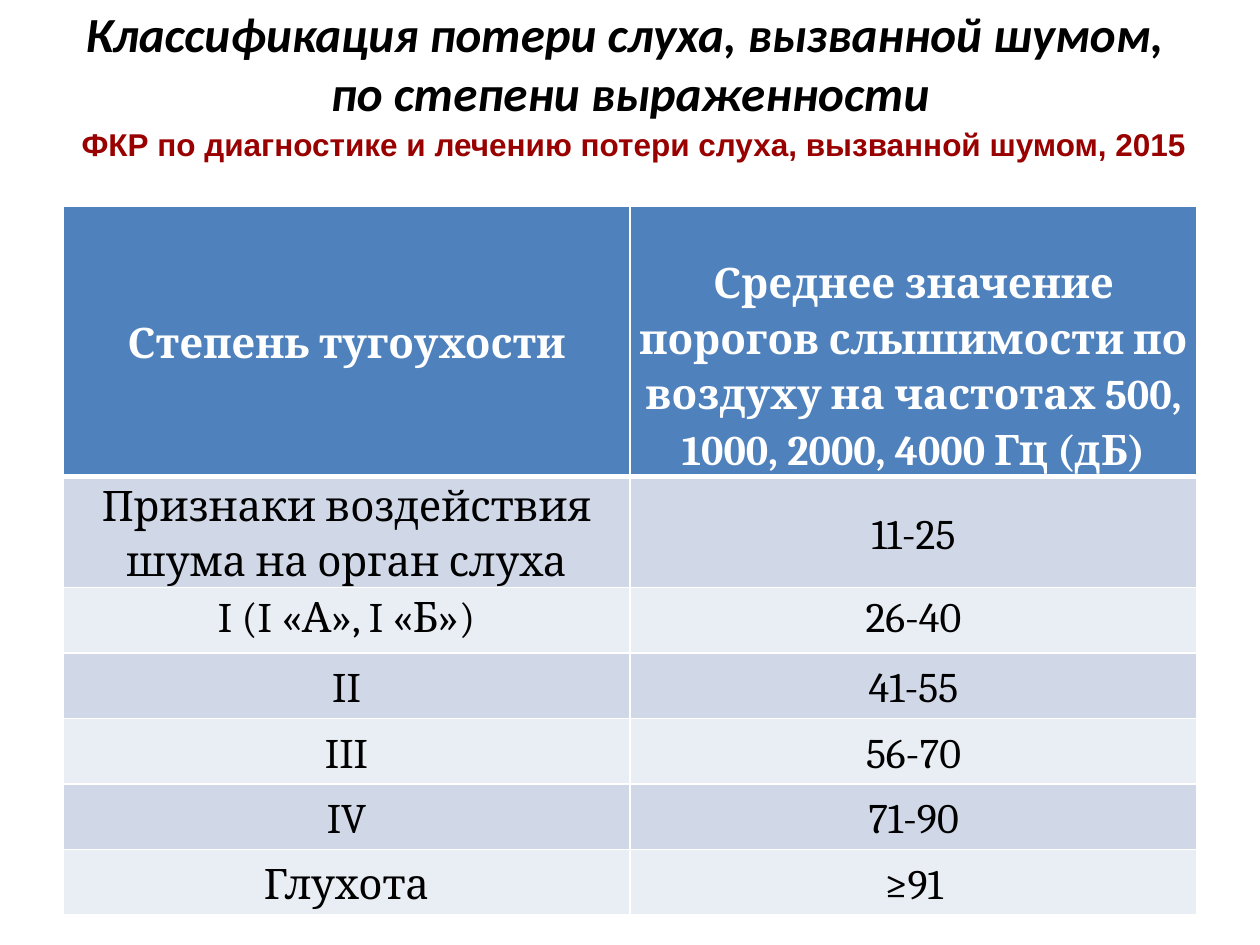
from lxml.etree import SubElement
from pptx import Presentation
from pptx.dml.color import RGBColor
from pptx.enum.text import MSO_ANCHOR, MSO_AUTO_SIZE, PP_ALIGN
from pptx.oxml.ns import qn
from pptx.util import Inches, Pt

# Content
TITLE = "Классификация потери слуха, вызванной шумом, \vпо степени выраженности"
SOURCE = "ФКР по диагностике и лечению потери слуха, вызванной шумом, 2015"
ROWS = [
    ("Степень тугоухости",
     "Среднее значение порогов слышимости по воздуху на частотах 500, 1000, 2000, 4000 Гц (дБ)"),
    ("Признаки воздействия шума на орган слуха", "11-25"),
    ("I (I «А», I «Б»)", "26-40"),
    ("II", "41-55"),
    ("III", "56-70"),
    ("IV", "71-90"),
    ("Глухота", "≥91"),
]
ROW_HEIGHTS = [2.14, 0.88] + [0.52] * 5
TOP_ALIGNED_ROW = 2
HEADER_DROP = 0.37  # space above the long column heading

THEME = {
    "title": {"font": "Calibri", "size": 28, "color": "000000", "bold": True, "italic": True},
    "source": {"font": "Arial", "size": 18, "color": "990000", "bold": True},
    "header": {"font": "Cambria", "size": 24, "color": "FFFFFF", "bold": True},
    "body": {"font": "Cambria", "size": 24, "color": "000000"},
    "header_fill": "4F81BD",
    "band_fills": ("E9EDF4", "D0D8E8"),
    "border": "FFFFFF",
}


def format_text(text_frame, style, alignment=None, line_spacing=None):
    for paragraph in text_frame.paragraphs:
        paragraph.alignment = alignment
        paragraph.line_spacing = line_spacing
        for run in paragraph.runs:
            font = run.font
            font.name = style["font"]
            font.size = Pt(style["size"])
            font.bold = style.get("bold", False)
            font.italic = style.get("italic", False)
            font.color.rgb = RGBColor.from_string(style["color"])


def set_borders(cell, widths):
    """Draw the cell's sides; widths are points for left, right, top, bottom."""
    properties = cell._tc.get_or_add_tcPr()
    for index, (side, width) in enumerate(zip("LRTB", widths)):
        line = SubElement(properties, qn(f"a:ln{side}"), w=str(Pt(width)))
        fill = SubElement(line, qn("a:solidFill"))
        SubElement(fill, qn("a:srgbClr"), val=THEME["border"])
        properties.insert(index, line)


def add_title(slide):
    title = slide.shapes.title
    title.left, title.top = Inches(0.5), Inches(0.1)
    title.width, title.height = Inches(9), Inches(0.79)
    text_frame = title.text_frame
    text_frame.text = TITLE
    text_frame.auto_size = MSO_AUTO_SIZE.NONE
    text_frame.vertical_anchor = MSO_ANCHOR.MIDDLE
    format_text(text_frame, THEME["title"], PP_ALIGN.CENTER)


def add_table(slide):
    table = slide.shapes.add_table(
        len(ROWS), len(ROWS[0]), Inches(0.5), Inches(1.64),
        Inches(9), Inches(sum(ROW_HEIGHTS))).table
    for row_index, (texts, height) in enumerate(zip(ROWS, ROW_HEIGHTS)):
        table.rows[row_index].height = Inches(height)
        is_header = row_index == 0
        fill = THEME["header_fill"] if is_header else THEME["band_fills"][row_index % 2]
        for column_index, text in enumerate(texts):
            cell = table.cell(row_index, column_index)
            cell.text_frame.text = text
            format_text(cell.text_frame, THEME["header" if is_header else "body"],
                        PP_ALIGN.CENTER, 1.15)
            cell.margin_left = cell.margin_right = Inches(0.07)
            cell.margin_top = cell.margin_bottom = 0
            cell.vertical_anchor = (
                MSO_ANCHOR.TOP if row_index == TOP_ALIGNED_ROW else MSO_ANCHOR.MIDDLE)
            cell.fill.solid()
            cell.fill.fore_color.rgb = RGBColor.from_string(fill)
            set_borders(cell, (1, 1, 3 if row_index == 1 else 1, 3 if is_header else 1))
    table.cell(0, 1).margin_top = Inches(HEADER_DROP)


def add_source(slide):
    box = slide.shapes.add_textbox(Inches(0.55), Inches(0.94), Inches(9.06), Inches(0.4))
    text_frame = box.text_frame
    text_frame.text = SOURCE
    text_frame.word_wrap = False
    text_frame.auto_size = MSO_AUTO_SIZE.SHAPE_TO_FIT_TEXT
    format_text(text_frame, THEME["source"])


def main():
    presentation = Presentation()
    presentation.slide_width, presentation.slide_height = Inches(10), Inches(7.5)
    slide = presentation.slides.add_slide(presentation.slide_layouts.get_by_name("Title Only"))
    add_title(slide)
    add_table(slide)
    add_source(slide)
    presentation.save("out.pptx")


if __name__ == "__main__":
    main()
